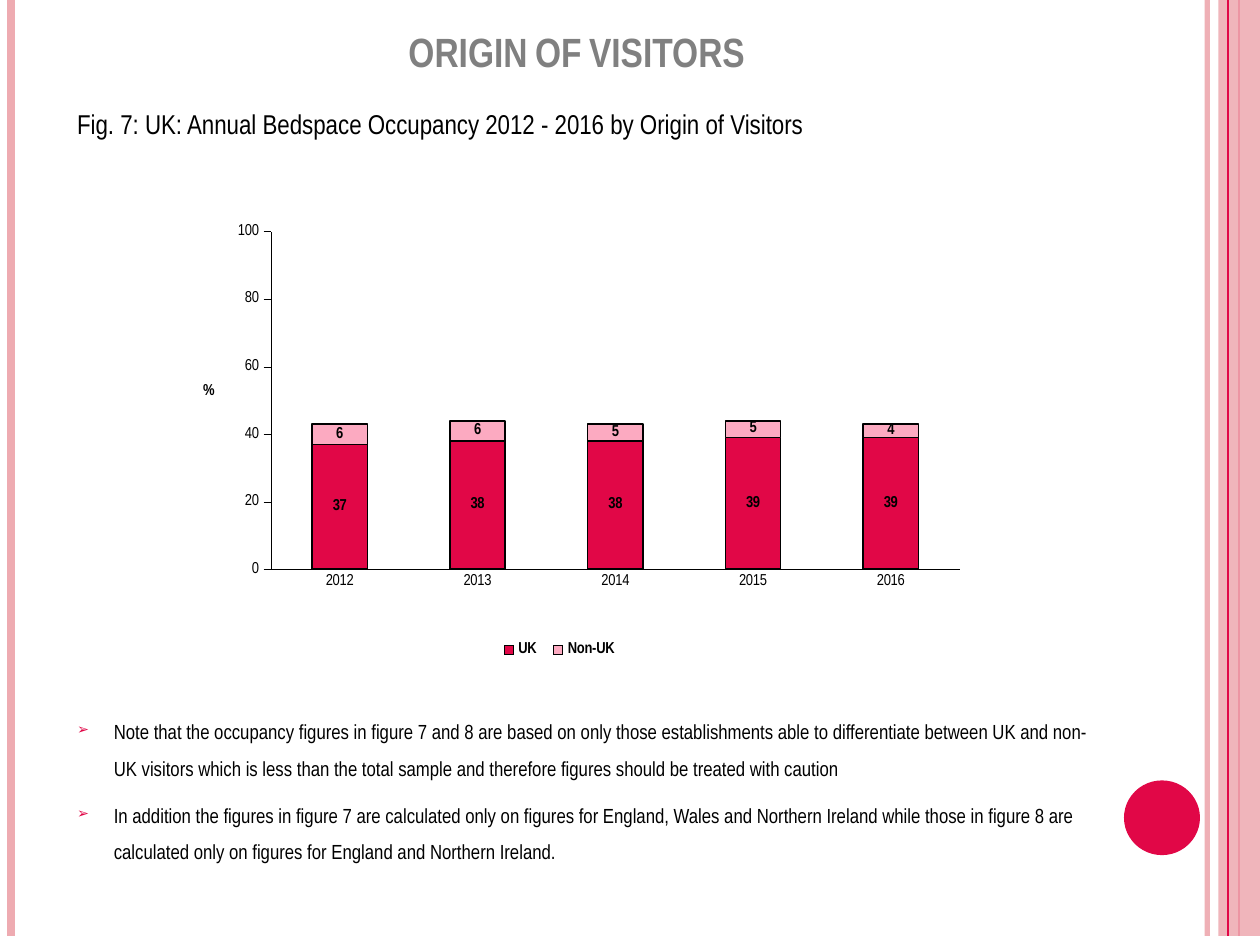
from lxml import etree
from pptx import Presentation
from pptx.chart.data import CategoryChartData
from pptx.dml.color import RGBColor
from pptx.enum.chart import XL_CHART_TYPE, XL_LABEL_POSITION, XL_LEGEND_POSITION, XL_TICK_MARK
from pptx.enum.shapes import MSO_CONNECTOR, MSO_SHAPE
from pptx.enum.text import MSO_ANCHOR, PP_ALIGN
from pptx.oxml.ns import qn
from pptx.util import Pt

PX = 9144
W, H = 1028, 764
FONT = "Arial Narrow"
BLACK = RGBColor(0, 0, 0)
GREY = RGBColor(0x80, 0x80, 0x80)
RED = RGBColor(0xE1, 0x07, 0x47)
ROSE = RGBColor(0xEE, 0xAB, 0xB1)
PINK = RGBColor(0xFC, 0xAA, 0xC1)
STRAIGHT = MSO_CONNECTOR.STRAIGHT
RECT, OVAL = MSO_SHAPE.RECTANGLE, MSO_SHAPE.OVAL
STACKED = XL_CHART_TYPE.COLUMN_STACKED
LABEL_CENTER = XL_LABEL_POSITION.CENTER
LEGEND_BOTTOM = XL_LEGEND_POSITION.BOTTOM
TICK_NONE, TICK_OUT = XL_TICK_MARK.NONE, XL_TICK_MARK.OUTSIDE
BOTTOM, TOP = MSO_ANCHOR.BOTTOM, MSO_ANCHOR.TOP
CENTER, LEFT = PP_ALIGN.CENTER, PP_ALIGN.LEFT

YEARS = ["2012", "2013", "2014", "2015", "2016"]
SERIES = [("UK", [37, 38, 38, 39, 39], RED), ("Non-UK", [6, 6, 5, 5, 4], PINK)]
NOTES = [
    "Note that the occupancy figures in figure 7 and 8 are based on only those "
    "establishments able to differentiate between UK and non-UK visitors which is "
    "less than the total sample and therefore figures should be treated with caution",
    "In addition the figures in figure 7 are calculated only on figures for England, "
    "Wales and Northern Ireland while those in figure 8 are calculated only on "
    "figures for England and Northern Ireland.",
]


def emu(*lengths):
    return [v * PX for v in lengths]


def set_alpha(fill_parent, percent):
    clr = next(fill_parent.iter(qn("a:srgbClr")))
    etree.SubElement(clr, qn("a:alpha"), val=str(percent * 1000))


def set_font(font, size, color=BLACK, bold=False):
    font.name, font.size, font.bold = FONT, Pt(size), bold
    font.color.rgb = color


def add_run(p, text, size, color=BLACK, bold=False):
    r = p.add_run()
    r.text = text
    set_font(r.font, size, color, bold)
    return r


def add_stripe(s, x, height, color, width, alpha=100):
    line = s.shapes.add_connector(STRAIGHT, *emu(x, 0, x, height))
    line.line.color.rgb = color
    line.line.width = Pt(width)
    if alpha < 100:
        set_alpha(line.line._ln, alpha)
    etree.SubElement(line._element.spPr, qn("a:effectLst"))


def add_solid(s, kind, box, color):
    sp = s.shapes.add_shape(kind, *emu(*box))
    sp.shadow.inherit = False
    sp.fill.solid()
    sp.fill.fore_color.rgb = color
    sp.line.fill.background()
    return sp


def add_frame(s, box):
    x, y, w, h = box
    add_stripe(s, x + w - 43, h, ROSE, 3, 93)
    add_stripe(s, x + 9, h, ROSE, 4.5)
    add_stripe(s, x + w - 17, h, RED, 1.5)
    band = add_solid(s, RECT, (x + w - 34, y, 34, h), ROSE)
    set_alpha(band._element.spPr, 87)
    add_stripe(s, x + w - 26, h, RED, 0.75)
    add_solid(s, OVAL, (x + w - 111, y + 637, 62, 61), RED)


def add_title(s, box):
    title = s.shapes.title
    title.left, title.top, title.width, title.height = emu(*box)
    tf = title.text_frame
    tf.vertical_anchor = BOTTOM
    p = tf.paragraphs[0]
    p.alignment = CENTER
    r = add_run(p, "ORIGIN OF VISITORS", 24, GREY, True)
    r.font._element.set("cap", "small")


def add_text_frame(s, box):
    tf = s.shapes.add_textbox(*emu(*box)).text_frame
    tf.word_wrap = True
    tf.vertical_anchor = TOP
    return tf


def add_caption(s, box):
    p = add_text_frame(s, box).paragraphs[0]
    add_run(p, "Fig. 7: UK: Annual Bedspace Occupancy 2012 - 2016 by Origin of Visitors", 16)


def set_bullet(p, indent):
    pPr = p._p.get_or_add_pPr()
    pPr.set("marL", str(indent * PX))
    pPr.set("indent", str(-indent * PX))
    clr = etree.SubElement(pPr, qn("a:buClr"))
    etree.SubElement(clr, qn("a:srgbClr"), val=str(RED))
    etree.SubElement(pPr, qn("a:buSzPct"), val="70000")
    etree.SubElement(pPr, qn("a:buFont"), typeface=FONT)
    etree.SubElement(pPr, qn("a:buChar"), char="➢")


def add_notes(s, box):
    tf = add_text_frame(s, box)
    for i, note in enumerate(NOTES):
        p = tf.add_paragraph() if i else tf.paragraphs[0]
        p.alignment = LEFT
        p.line_spacing = 1.5
        p.space_before = Pt(6)
        set_bullet(p, 30)
        add_run(p, note, 12)


def set_layout(parent, before, **place):
    for old in parent.findall(qn("c:layout")):
        parent.remove(old)
    layout = etree.Element(qn("c:layout"))
    manual = etree.SubElement(layout, qn("c:manualLayout"))
    for tag, value in place.items():
        etree.SubElement(manual, qn("c:" + tag), val=str(value))
    parent.find(qn(before)).addprevious(layout)


def style_axis(axis, tick):
    axis.has_major_gridlines = False
    axis.major_tick_mark = tick
    axis.minor_tick_mark = TICK_NONE
    axis.format.line.color.rgb = BLACK
    axis.format.line.width = Pt(0.23)
    set_font(axis.tick_labels.font, 9.3)


def add_occupancy_chart(s, box):
    data = CategoryChartData()
    data.categories = YEARS
    for name, values, _ in SERIES:
        data.add_series(name, values)
    chart = s.shapes.add_chart(STACKED, *emu(*box), data).chart
    chart.has_title = False
    set_font(chart.font, 9.3, bold=True)

    plot = chart.plots[0]
    plot.vary_by_categories = False
    plot.gap_width, plot.overlap = 150, 100
    for series, (_, _, color) in zip(plot.series, SERIES):
        series.format.fill.solid()
        series.format.fill.fore_color.rgb = color
        series.format.line.color.rgb = BLACK
        series.format.line.width = Pt(0.9)
        labels = series.data_labels
        labels.show_value = True
        labels.position = LABEL_CENTER
        set_font(labels.font, 9.3, bold=True)

    style_axis(chart.category_axis, TICK_NONE)
    axis = chart.value_axis
    style_axis(axis, TICK_OUT)
    axis.minimum_scale, axis.maximum_scale, axis.major_unit = 0, 100, 20
    tf = axis.axis_title.text_frame
    tf._txBody.bodyPr.set("rot", "0")
    add_run(tf.paragraphs[0], "%", 9.3, bold=True)

    chart.has_legend = True
    legend = chart.legend
    legend.position = LEGEND_BOTTOM
    legend.include_in_layout = False
    set_font(legend.font, 9.3, bold=True)

    w = box[2]
    set_layout(plot._element.getparent(), "c:barChart", layoutTarget="inner",
               xMode="edge", yMode="edge", x=77 / w, y=0.13, w=562 / w, h=0.65)
    set_layout(axis.axis_title._element, "c:overlay",
               xMode="edge", yMode="edge", x=0.03, y=0.415)
    set_layout(legend._element, "c:overlay",
               xMode="edge", yMode="edge", x=0.4, y=0.91, w=0.17, h=0.05)


def main():
    prs = Presentation()
    prs.slide_width, prs.slide_height = emu(W, H)
    s = prs.slides.add_slide(prs.slide_layouts[5])
    add_frame(s, (0, 0, W, H))
    add_title(s, (51, 12, 839, 55))
    add_occupancy_chart(s, (144, 134, 644, 424))
    add_notes(s, (53, 572, 855, 163))
    add_caption(s, (53, 83, 825, 37))
    prs.save("out.pptx")


if __name__ == "__main__":
    main()
